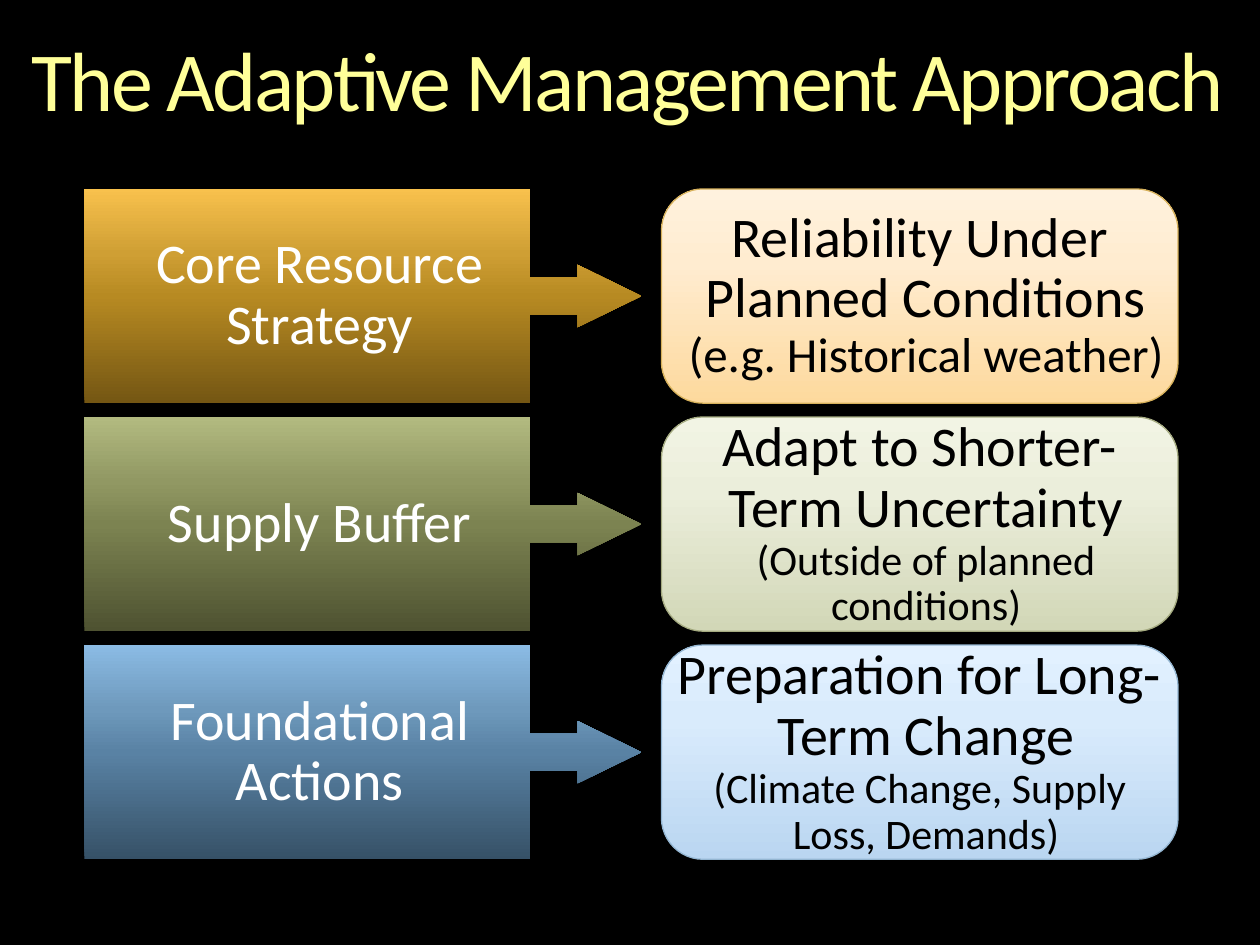
from pptx import Presentation
from pptx.dml.color import RGBColor
from pptx.enum.shapes import MSO_SHAPE
from pptx.enum.text import MSO_ANCHOR, MSO_AUTO_SIZE, PP_ALIGN
from pptx.oxml.ns import qn
from pptx.util import Inches, Pt
from lxml.etree import SubElement

# Content: each row has a callout text and the paragraphs of its goal box
TITLE = "The Adaptive Management Approach"
ROWS = [
    ("gold", "Core Resource Strategy",
     [[("Reliability Under Planned Conditions ", "main"),
       ("(e.g. Historical weather)", "note")]]),
    ("green", "Supply Buffer",
     [[("Adapt to Shorter-Term Uncertainty ", "main"),
       ("(Outside of planned conditions)", "small")]]),
    ("blue", "Foundational Actions",
     [[("Preparation for Long-Term Change", "main")],
      [("(Climate Change, Supply Loss, Demands)", "small")]]),
]

THEME = {
    "font": "Calibri",
    "back": "000000", "title": "FFFF99", "light": "FFFFFF", "dark": "000000",
    "size": {"title": 48, "main": 32, "note": 28, "small": 24},
    "deep": {
        "gold": [(0, "745613"), (50, "B78A22"), (70, "CF9F34"), (100, "F8C14D")],
        "green": [(0, "4E5231"), (50, "7C8351"), (70, "919863"), (100, "B2BA80")],
        "blue": [(0, "365167"), (50, "5982A4"), (70, "6E99BC"), (100, "8BBBE4")],
    },
    "pale": {
        "gold": [(0, "FDD99D"), (65, "FFECD0"), (100, "FFF2DE")],
        "green": [(0, "D2D7B7"), (65, "EBEEDB"), (100, "F2F4E4")],
        "blue": [(0, "BAD6F1"), (65, "D9EBFC"), (100, "E2F1FF")],
    },
    "edge": {"gold": "D8B25C", "green": "A5AB81", "blue": "94B6D2"},
}

# Layout in inches
TOP, PITCH, HIGH = 1.5, 1.81, 1.7
CALL_X, CALL_W = 0.67, 4.42
GOAL_X, GOAL_W = 5.25, 4.1


def color(name):
    return RGBColor.from_string(name)


def blend(fill, stops):
    """Fill from bottom to top through any number of stops."""
    fill.gradient()
    fill.gradient_angle = 90
    group = fill._fill._gradFill.find(qn("a:gsLst"))
    for old in list(group):
        group.remove(old)
    for pos, tint in stops:
        stop = SubElement(group, qn("a:gs"), pos=str(pos * 1000))
        SubElement(stop, qn("a:srgbClr"), val=tint)


def write(shape, paras, tint, align, anchor, left=0, first=0):
    frame = shape.text_frame
    frame.word_wrap = True
    frame.auto_size = MSO_AUTO_SIZE.NONE
    frame.vertical_anchor = anchor
    frame.margin_left = frame.margin_right = 0
    frame.margin_top = frame.margin_bottom = 0
    for num, runs in enumerate(paras):
        para = frame.paragraphs[0] if num == 0 else frame.add_paragraph()
        para.alignment = align
        para.line_spacing = 0.9
        para.space_before = Pt(0)
        props = para._p.get_or_add_pPr()
        props.set("marL", str(Inches(left)))
        props.set("indent", str(Inches(first)))
        for text, level in runs:
            run = para.add_run()
            run.text = text
            run.font.name = THEME["font"]
            run.font.size = Pt(THEME["size"][level])
            run.font.color.rgb = color(tint)


def panel(slide, kind, x, y, wide, adjust, stops):
    shape = slide.shapes.add_shape(
        kind, Inches(x), Inches(y), Inches(wide), Inches(HIGH))
    shape.shadow.inherit = False
    for num, value in enumerate(adjust):
        shape.adjustments[num] = value
    blend(shape.fill, stops)
    return shape


def main():
    deck = Presentation()
    deck.slide_width, deck.slide_height = Inches(10), Inches(7.5)
    slide = deck.slides.add_slide(deck.slide_layouts[5])
    slide.background.fill.solid()
    slide.background.fill.fore_color.rgb = color(THEME["back"])

    # Title
    title = slide.shapes.title
    title.left, title.top = Inches(0.25), Inches(0.31)
    title.width, title.height = Inches(9.5), Inches(1.45)
    write(title, [[(TITLE, "title")]], THEME["title"],
          PP_ALIGN.LEFT, MSO_ANCHOR.TOP)
    run = title.text_frame.paragraphs[0].runs[0]
    run.font._element.set("spc", "-150")

    for num, (hue, label, goal) in enumerate(ROWS):
        y = TOP + num * PITCH

        # Arrow callout
        call = panel(slide, MSO_SHAPE.RIGHT_ARROW_CALLOUT, CALL_X, y, CALL_W,
                     (0.174, 0.145, 0.297, 0.8), THEME["deep"][hue])
        call.line.fill.background()
        write(call, [[(label, "main")]], THEME["light"],
              PP_ALIGN.CENTER, MSO_ANCHOR.MIDDLE, left=0.2)

        # Goal box
        box = panel(slide, MSO_SHAPE.ROUNDED_RECTANGLE, GOAL_X, y, GOAL_W,
                    (0.194,), THEME["pale"][hue])
        box.line.color.rgb = color(THEME["edge"][hue])
        box.line.width = Pt(0.75)
        write(box, goal, THEME["dark"], PP_ALIGN.CENTER, MSO_ANCHOR.MIDDLE,
              left=0.1, first=-0.43)

    deck.save("out.pptx")


if __name__ == "__main__":
    main()
